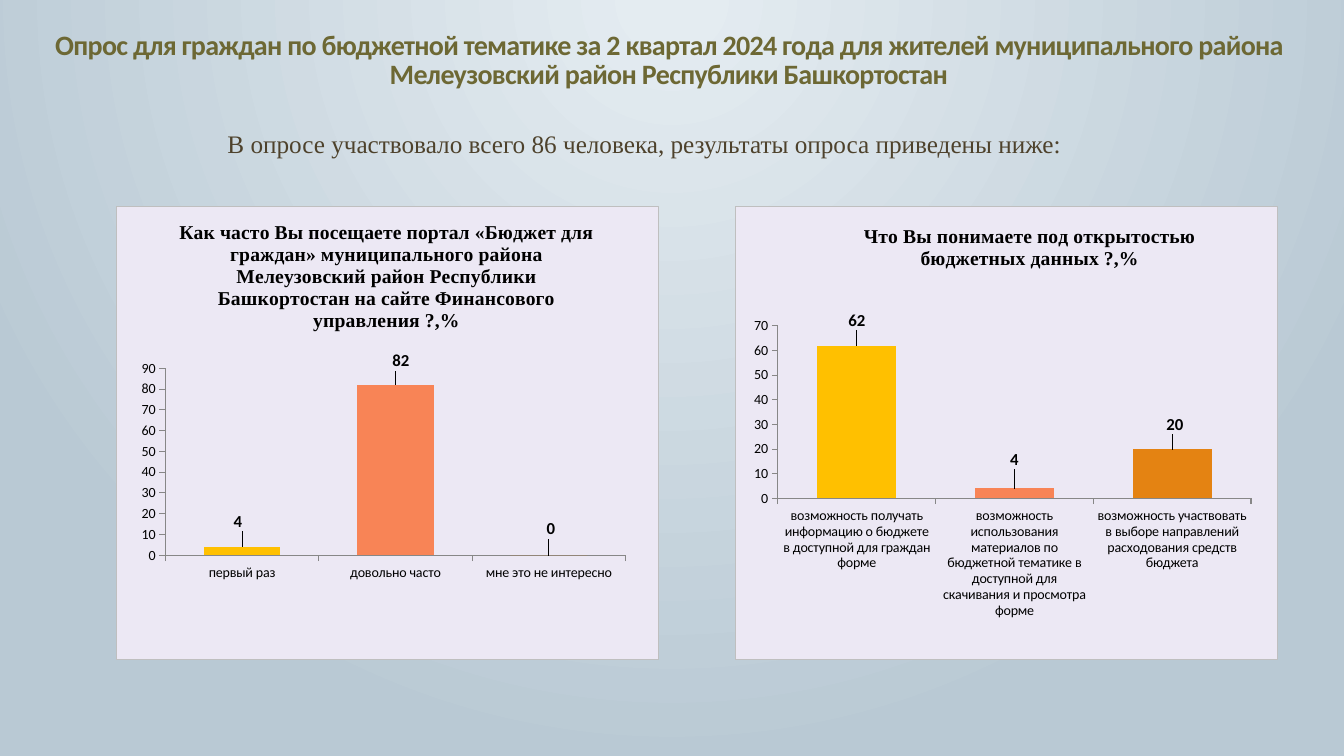
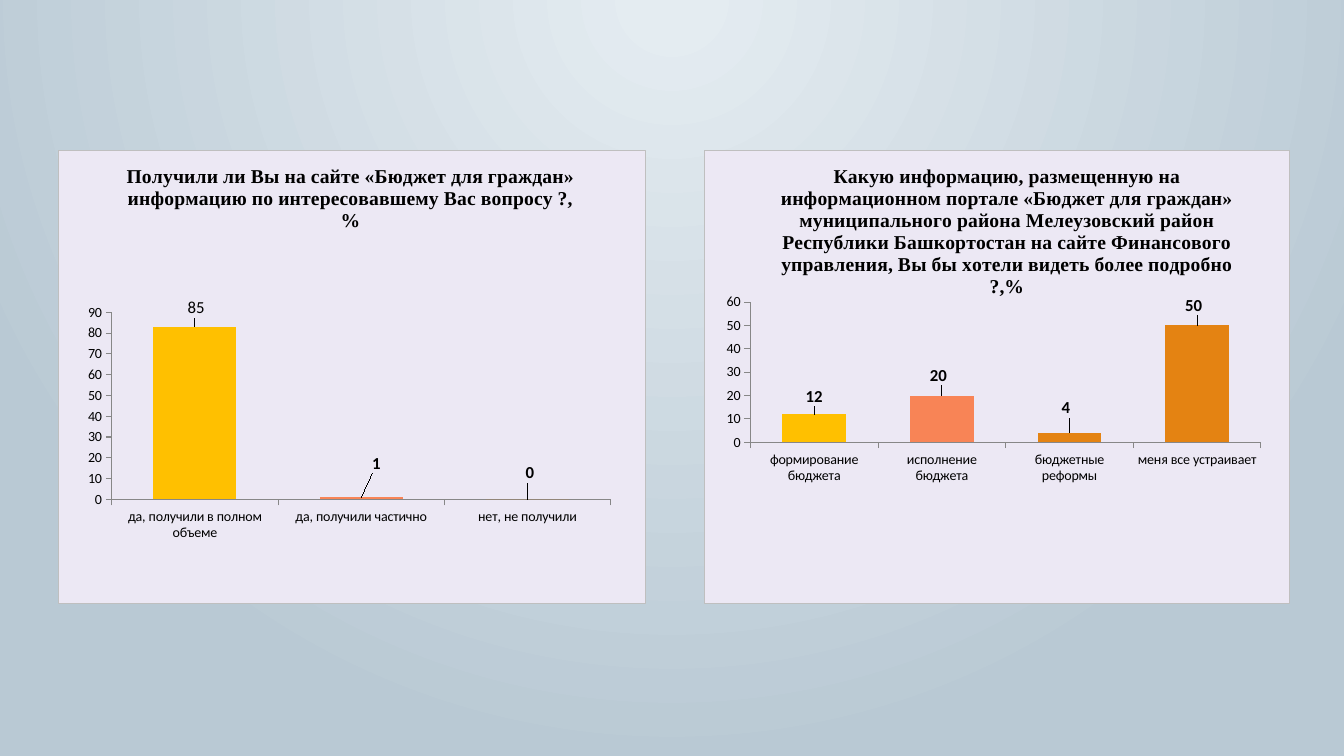
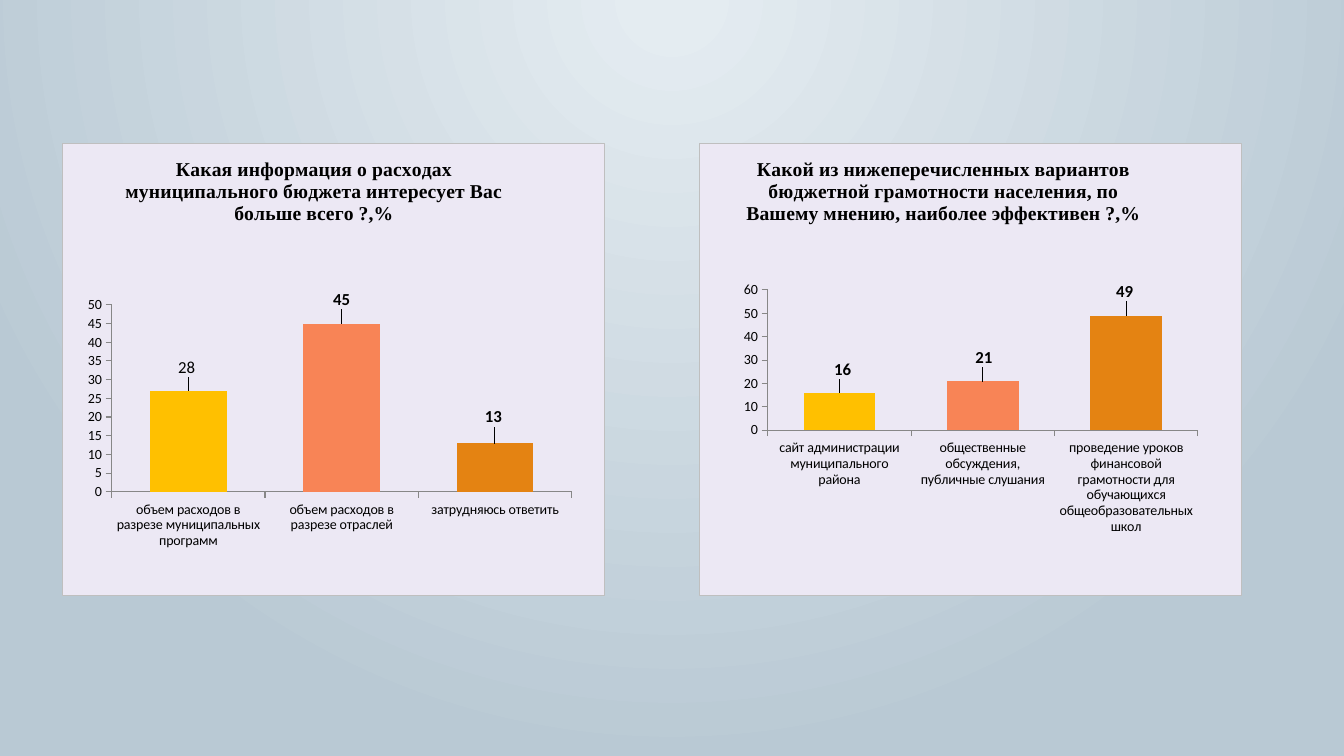
from lxml import etree
from pptx import Presentation
from pptx.chart.data import CategoryChartData
from pptx.dml.color import RGBColor
from pptx.enum.chart import XL_CHART_TYPE, XL_LABEL_POSITION, XL_TICK_MARK
from pptx.enum.text import MSO_ANCHOR, PP_ALIGN
from pptx.oxml import parse_xml
from pptx.oxml.ns import nsdecls, qn
from pptx.util import Inches, Pt

COLUMN = XL_CHART_TYPE.COLUMN_CLUSTERED
ABOVE = XL_LABEL_POSITION.OUTSIDE_END
TICK = XL_TICK_MARK.OUTSIDE
CENTER = PP_ALIGN.CENTER
BOTTOM, TOP = MSO_ANCHOR.BOTTOM, MSO_ANCHOR.TOP

OLIVE = RGBColor(0x6D, 0x68, 0x34)
BROWN = RGBColor(0x4E, 0x42, 0x2C)
BLACK = RGBColor(0x00, 0x00, 0x00)
GRAY = RGBColor(0x87, 0x87, 0x87)
BORDER = RGBColor(0xBF, 0xBF, 0xBF)
LILAC = RGBColor(0xEC, 0xE8, 0xF4)
GOLD = RGBColor(0xFF, 0xC0, 0x00)
CORAL = RGBColor(0xF8, 0x84, 0x56)
ORANGE = RGBColor(0xE4, 0x83, 0x12)
SKY = RGBColor(0xE4, 0xEC, 0xF1)
STEEL = RGBColor(0xB9, 0xC9, 0xD4)

SANS, SERIF = "Calibri", "Times New Roman"
WIDTH, HEIGHT = Inches(13.33), Inches(7.5)

# Plot areas: left, top, width, height in percent of the chart
LEFT_PLOT = (9.1, 35.7, 84.9, 41.3)

# Each slide: top of its charts, then the charts.
# Chart: left, width (percent of slide), title, title place, plot, rows.
# Row: category, value, label shift in percent of the chart, own label text.
SLIDES = [
    (27.3, [
        (8.6, 40.4,
         "Как часто Вы посещаете портал «Бюджет для граждан» муниципального "
         "района Мелеузовский район Республики Башкортостан на сайте "
         "Финансового управления ?,%", (11, 2), LEFT_PLOT,
         [("первый раз", 4, (-0.8, -2.5)),
          ("довольно часто", 82, (1, -2.2)),
          ("мне это не интересно", 0, (0.4, -2.7))]),
        (54.7, 40.4,
         "Что Вы понимаете под открытостью бюджетных данных ?,%",
         (23, 2.8), (7.8, 26.3, 87.3, 38.1),
         [("возможность получать информацию о бюджете в доступной для "
           "граждан форме", 62, (0, -2.4)),
          ("возможность использования материалов по бюджетной тематике в "
           "доступной для скачивания и просмотра форме", 4, (0, -3.3)),
          ("возможность участвовать в выборе направлений расходования "
           "средств бюджета", 20, (0.5, -2.4))]),
    ]),
    (19.9, [
        (4.3, 43.8,
         "Получили ли Вы на сайте «Бюджет для граждан» информацию по "
         "интересовавшему Вас вопросу ?,%", (11, 2), LEFT_PLOT,
         [("да, получили в полном объеме", 83, (0.2, -1.1), "85"),
          ("да, получили частично", 1, (2.6, -4.4)),
          ("нет, не получили", 0, (0.4, -2.7))]),
        (52.4, 43.6,
         "Какую информацию, размещенную на информационном портале «Бюджет "
         "для граждан» муниципального района Мелеузовский район Республики "
         "Башкортостан на сайте Финансового управления, Вы бы хотели видеть "
         "более подробно ?,%", (12.4, 2), (7.8, 33.4, 87.3, 31),
         [("формирование бюджета", 12, (0, -0.9)),
          ("исполнение бюджета", 20, (-0.6, -1.3)),
          ("бюджетные реформы", 4, (-0.6, -2.4)),
          ("меня все устраивает", 50, (-0.6, -1.3))]),
    ]),
    (18.9, [
        (4.6, 40.4,
         "Какая информация о расходах муниципального бюджета интересует Вас "
         "больше всего ?,%", (11, 2), LEFT_PLOT,
         [("объем расходов в разрезе муниципальных программ", 27,
           (-0.3, -2), "28"),
          ("объем расходов в разрезе отраслей", 45, (0, -2.2)),
          ("затрудняюсь ответить", 13, (-0.3, -2.7))]),
        (52, 40.4,
         "Какой из нижеперечисленных вариантов бюджетной грамотности "
         "населения, по Вашему мнению, наиболее эффективен ?,%",
         (8, 2), (12.6, 32.4, 79.4, 31),
         [("сайт администрации муниципального района", 16, (0.6, -2)),
          ("общественные обсуждения, публичные слушания", 21, (0.2, -2.2)),
          ("проведение уроков финансовой грамотности для обучающихся "
           "общеобразовательных школ", 49, (-0.3, -2.2))]),
    ]),
]


def area(left, top, width, height):
    """Turn percentages of the slide into lengths."""
    return (int(WIDTH * left / 100), int(HEIGHT * top / 100),
            int(WIDTH * width / 100), int(HEIGHT * height / 100))


def style(font, size, color, name=SANS, bold=False):
    font.size, font.name, font.bold = Pt(size), name, bold
    font.color.rgb = color


def add_backdrop(master):
    stops = "".join(
        f'<a:gs pos="{pos}"><a:srgbClr val="{color}"/></a:gs>'
        for pos, color in ((3000, SKY), (100000, STEEL)))
    page = master.element.find(qn("p:cSld"))
    for old in page.findall(qn("p:bg")):
        page.remove(old)
    page.insert(0, parse_xml(
        f'<p:bg {nsdecls("p", "a")}><p:bgPr><a:gradFill rotWithShape="1">'
        f'<a:gsLst>{stops}</a:gsLst><a:path path="circle">'
        '<a:fillToRect l="43000" r="43000" b="100000"/></a:path>'
        '</a:gradFill><a:effectLst/></p:bgPr></p:bg>'))


def add_text(slide, box, text, size, color, name, bold=False, anchor=TOP):
    frame = slide.shapes.add_textbox(*area(*box)).text_frame
    frame.word_wrap = True
    frame.vertical_anchor = anchor
    line = frame.paragraphs[0]
    line.text = text
    line.alignment = CENTER
    style(line.runs[0].font, size, color, name, bold)
    return line


def set_layout(parent, index, mode="", **shares):
    """Give a chart part a manual layout; shares are percentages."""
    for old in parent.findall(qn("c:layout")):
        parent.remove(old)
    layout = etree.Element(qn("c:layout"))
    manual = etree.SubElement(layout, qn("c:manualLayout"))
    marks = {"layoutTarget": "inner"} if "w" in shares else {}
    if mode:
        marks.update(xMode=mode, yMode=mode)
    marks.update((key, f"{part / 100:.3f}") for key, part in shares.items())
    for tag, val in marks.items():
        etree.SubElement(manual, qn(f"c:{tag}")).set("val", val)
    parent.insert(index, layout)


def set_frame(chart):
    """Fill and outline the whole chart."""
    chart.element.find(qn("c:txPr")).addprevious(parse_xml(
        f'<c:spPr {nsdecls("c", "a")}>'
        f'<a:solidFill><a:srgbClr val="{LILAC}"/></a:solidFill>'
        f'<a:ln w="{Pt(0.75)}"><a:solidFill><a:srgbClr val="{BORDER}"/>'
        '</a:solidFill></a:ln></c:spPr>'))


def set_title(chart, text, place):
    frame = chart.chart_title.text_frame
    frame.text = text
    style(frame.paragraphs[0].runs[0].font, 14, BLACK, SERIF, True)
    title = chart.element.find(".//" + qn("c:title"))
    set_layout(title, 1, "edge", x=place[0], y=place[1])


def set_axes(chart):
    for axis in (chart.category_axis, chart.value_axis):
        axis.has_major_gridlines = False
        axis.major_tick_mark = TICK
        axis.format.line.color.rgb = GRAY
        axis.format.line.width = Pt(0.75)
        style(axis.tick_labels.font, 10, BLACK)


def set_bars(chart, rows):
    plot = chart.plots[0]
    plot.gap_width = 100
    plot.vary_by_categories = False
    bars = plot.series[0]
    bars.format.fill.solid()
    bars.format.fill.fore_color.rgb = ORANGE
    for index, color in enumerate((GOLD, CORAL)):
        fill = bars.points[index].format.fill
        fill.solid()
        fill.fore_color.rgb = color
    for index, (_, _, _, *own) in enumerate(rows):
        label = bars.points[index].data_label
        if own:
            label.text_frame.text = own[0]
            font = label.text_frame.paragraphs[0].runs[0].font
        else:
            font = label.font
        style(font, 12, BLACK, bold=not own)
        label.position = ABOVE
    for label, row in zip(chart.element.iter(qn("c:dLbl")), rows):
        set_layout(label, 1, x=row[2][0], y=row[2][1])


def add_bars(slide, top, left, width, title, place, shares, rows):
    data = CategoryChartData()
    data.categories = [row[0] for row in rows]
    data.add_series("Series 1", [row[1] for row in rows])
    chart = slide.shapes.add_chart(
        COLUMN, *area(left, top, width, 60), data).chart
    style(chart.font, 10, BLACK)
    chart.has_legend = False
    set_frame(chart)
    set_title(chart, title, place)
    set_axes(chart)
    set_bars(chart, rows)
    set_layout(chart.element.find(".//" + qn("c:plotArea")), 0, "edge",
               **dict(zip("xywh", shares)))


def add_heading(slide):
    head = add_text(
        slide, (2.25, 2.1, 95, 10.5),
        "Опрос для граждан по бюджетной тематике за 2 квартал 2024 года для "
        "жителей муниципального района Мелеузовский район Республики "
        "Башкортостан", 20, OLIVE, SANS, True, BOTTOM)
    head.line_spacing = 0.85
    head.runs[0].font._element.set("spc", "-50")
    add_text(
        slide, (12.5, 16.3, 70.9, 5.3),
        "В опросе участвовало всего 86 человека, результаты опроса "
        "приведены ниже:", 18, BROWN, SERIF)


def main():
    deck = Presentation()
    deck.slide_width, deck.slide_height = WIDTH, HEIGHT
    add_backdrop(deck.slide_master)
    for number, (top, charts) in enumerate(SLIDES):
        slide = deck.slides.add_slide(deck.slide_layouts[6])
        if number == 0:
            add_heading(slide)
        for chart in charts:
            add_bars(slide, top, *chart)
    deck.save("out.pptx")


if __name__ == "__main__":
    main()
